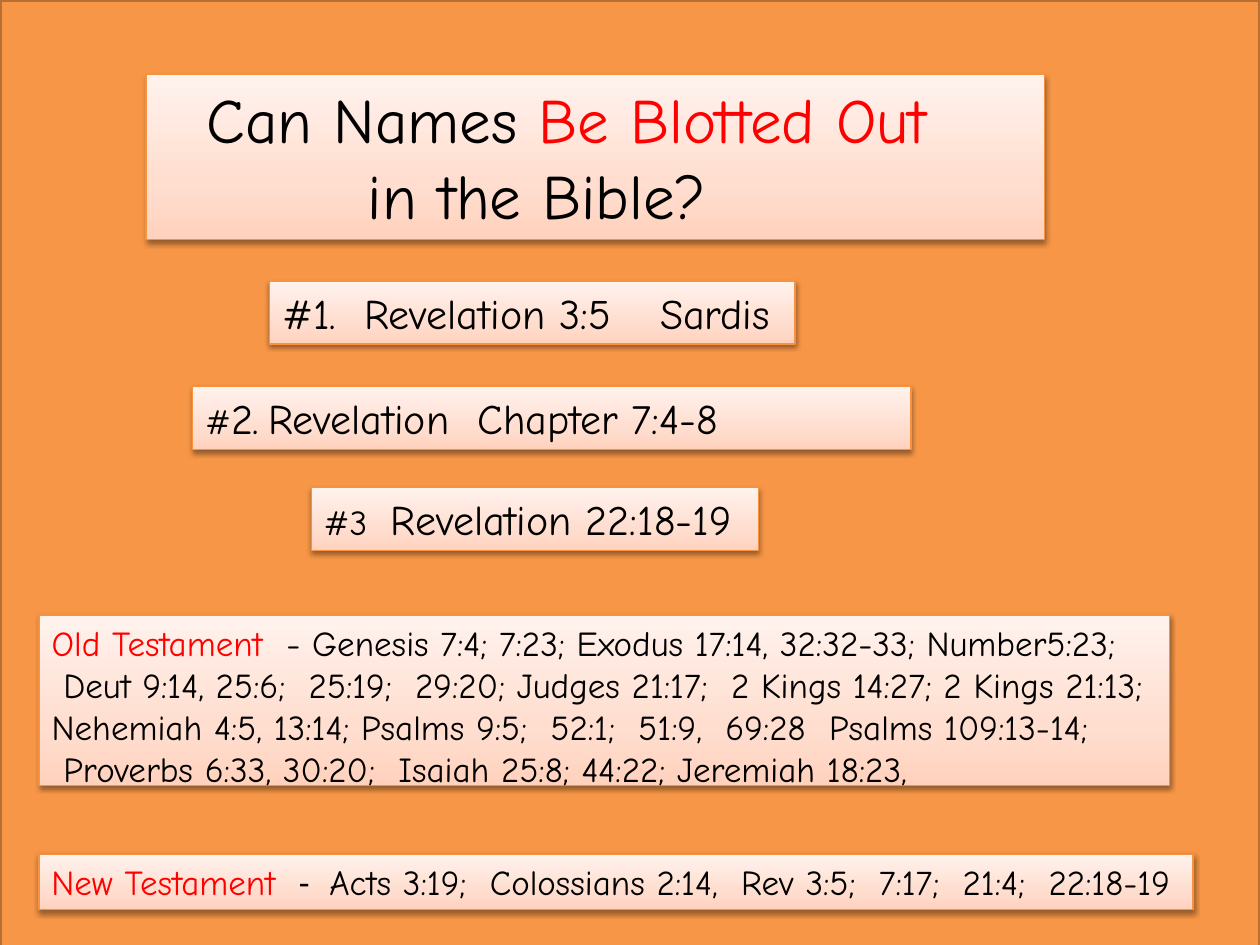
import pptx
import pptx.dml.color
import pptx.enum.shapes
import pptx.enum.text
import pptx.oxml
import pptx.oxml.ns
import pptx.util

COLORS = {
    "orange": "F79646", "frame": "B76F34", "edge": "F69240",
    "black": "000000", "red": "FF0000",
    "deep": "FFD2BD", "middle": "FFDED0", "pale": "FFF2ED",
}
FONT = "Comic Neue"
CELL = pptx.util.Inches(0.1)
COLUMNS, ROWS = 100, 75


def color(name):
    return pptx.dml.color.RGBColor.from_string(COLORS[name])


def xml(tag, body, attributes=""):
    namespace = pptx.oxml.ns.nsdecls("a")
    return pptx.oxml.parse_xml(f"<a:{tag} {namespace} {attributes}>{body}</a:{tag}>")


class Slide:
    def __init__(self, deck):
        self.page = deck.slides.add_slide(deck.slide_layouts[1])
        self.title, self.body = self.page.placeholders

    def backdrop(self, rows):
        shape = self.page.shapes.add_shape(
            pptx.enum.shapes.MSO_SHAPE.RECTANGLE, 0, 0, COLUMNS * CELL, int(rows * CELL))
        shape.shadow.inherit = False
        shape.fill.solid()
        shape.fill.fore_color.rgb = color("orange")
        shape.line.color.rgb = color("frame")
        shape.line.width = pptx.util.Pt(2)
        shape._element.getparent().insert(2, shape._element)

    def panel(self, left, top, width, height, paragraphs, box=None):
        place = [int(cells * CELL) for cells in (left, top, width, height)]
        box = box or self.page.shapes.add_textbox(*place)
        box.left, box.top, box.width, box.height = place
        self.paint(box)
        frame = box.text_frame
        frame.word_wrap = True
        frame.auto_size = pptx.enum.text.MSO_AUTO_SIZE.SHAPE_TO_FIT_TEXT
        frame.vertical_anchor = pptx.enum.text.MSO_ANCHOR.TOP
        for index, content in enumerate(paragraphs):
            para = frame.add_paragraph() if index else frame.paragraphs[0]
            self.paragraph(para, **content)

    def paint(self, box):
        properties = box._element.spPr
        for old in properties.findall(pptx.oxml.ns.qn("a:noFill")):
            properties.remove(old)
        stops = "".join(
            f'<a:gs pos="{share * 1000}"><a:srgbClr val="{COLORS[name]}"/></a:gs>'
            for share, name in ((0, "deep"), (35, "middle"), (100, "pale")))
        properties.append(xml(
            "gradFill", f'<a:gsLst>{stops}</a:gsLst><a:lin ang="16200000" scaled="0"/>'))
        box.line.color.rgb = color("edge")
        box.line.width = pptx.util.Pt(0.75)
        blur, distance = pptx.util.Pt(3.1), pptx.util.Pt(1.6)
        properties.append(xml(
            "effectLst",
            f'<a:outerShdw blurRad="{blur}" dist="{distance}" dir="5400000" rotWithShape="0">'
            f'<a:srgbClr val="{COLORS["black"]}"><a:alpha val="38000"/></a:srgbClr></a:outerShdw>'))

    def paragraph(self, para, spans, indent=0, tab=None):
        para.alignment = pptx.enum.text.PP_ALIGN.LEFT
        para.space_before = pptx.util.Pt(0)
        settings = para._p.get_or_add_pPr()
        settings.set("marL", str(int(indent * CELL)))
        settings.set("indent", "0")
        settings.append(xml("buNone", ""))
        if tab:
            settings.append(xml("tabLst", f'<a:tab pos="{int(tab * CELL)}" algn="l"/>'))
        for text, size, shade, *font in spans:
            span = para.add_run()
            span.text = text
            span.font.size = pptx.util.Pt(size)
            span.font.color.rgb = color(shade)
            span.font.name = font[0] if font else FONT


def main():
    deck = pptx.Presentation()
    deck.slide_width, deck.slide_height = COLUMNS * CELL, ROWS * CELL
    slide = Slide(deck)
    slide.backdrop(76.5)
    slide.panel(11.6, 5.9, 71.3, 13.1, [
        {"spans": [("Can Names ", 36, "black"), ("Be Blotted Out", 36, "red")], "indent": 3.8},
        {"spans": [("in the Bible?", 36, "black")], "indent": 16.6},
    ], slide.title)
    slide.panel(21.4, 22.3, 41.7, 5, [
        {"spans": [("#1.  Revelation 3:5\tSardis", 24, "black")], "tab": 30.4}])
    slide.panel(15.3, 30.7, 57, 5, [
        {"spans": [("#", 20, "black"), ("2.\tRevelation  Chapter 7:4-8", 24, "black")],
         "tab": 9.6}])
    slide.panel(24.7, 38.7, 35.5, 5, [
        {"spans": [("#3  ", 20, "black"), ("Revelation 22:18-19", 24, "black")]}])
    slide.panel(3.1, 48.8, 89.7, 14.5, [
        {"spans": [
            ("Old Testament  ", 20, "red"),
            ("- Genesis 7:4; 7:23; Exodus 17:14, 32:32-33; Number5:23;", 20, "black")]},
        {"spans": [(
            " Deut 9:14, 25:6;  25:19;  29:20; Judges 21:17;  2 Kings 14:27; 2 Kings 21:13; "
            "Nehemiah 4:5, 13:14; Psalms 9:5;  52:1;  51:9,  69:28  Psalms 109:13-14;",
            20, "black")]},
        {"spans": [(
            " Proverbs 6:33, 30:20;  Isaiah 25:8; 44:22; Jeremiah 18:23,", 20, "black")]},
    ], slide.body)
    slide.panel(3.1, 67.8, 91.6, 4.4, [
        {"spans": [
            ("New Testament  ", 20, "red"),
            ("- ", 20, "black", "Calibri"),
            (" Acts 3:19;  Colossians 2:14,  Rev 3:5;  7:17;  21:4;  22:18-19", 20, "black")]}])
    deck.save("out.pptx")


if __name__ == "__main__":
    main()
